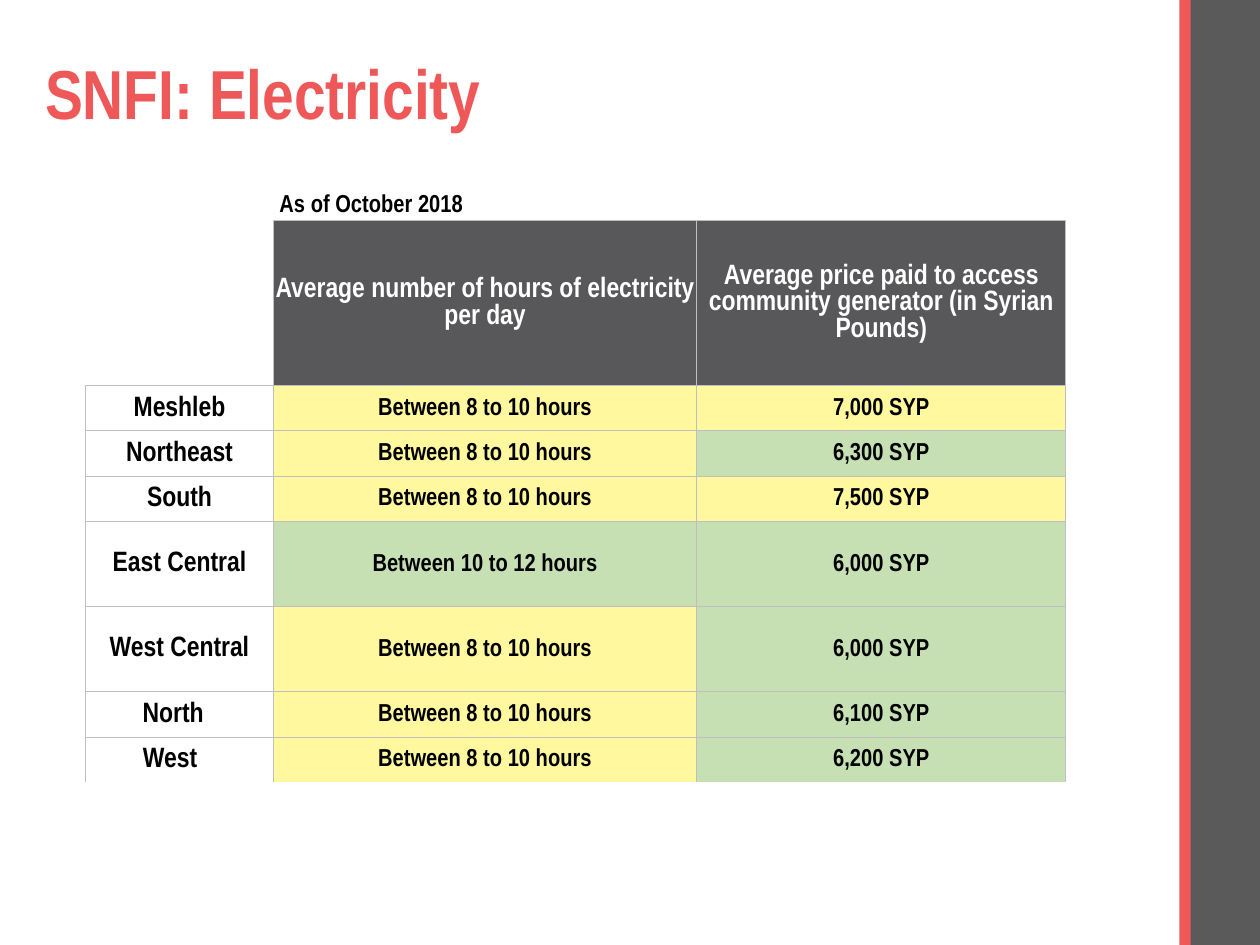
from typing import NamedTuple

from lxml import etree
from pptx import Presentation
from pptx.dml.color import RGBColor
from pptx.enum.shapes import MSO_SHAPE
from pptx.enum.text import MSO_ANCHOR, PP_ALIGN
from pptx.oxml.ns import qn
from pptx.util import Emu, Inches, Pt

RECT = MSO_SHAPE.RECTANGLE
MIDDLE, TOP = MSO_ANCHOR.MIDDLE, MSO_ANCHOR.TOP
CENTER, LEFT = PP_ALIGN.CENTER, PP_ALIGN.LEFT

RED = RGBColor(0xEE, 0x58, 0x59)
BAR_GRAY = RGBColor(0x5A, 0x5A, 0x5A)
HEADER_GRAY = RGBColor(0x58, 0x58, 0x5A)
YELLOW = RGBColor(0xFF, 0xF8, 0x9F)
GREEN = RGBColor(0xC6, 0xE0, 0xB4)
BORDER = RGBColor(0xBF, 0xBF, 0xBF)
BLACK = RGBColor(0, 0, 0)
WHITE = RGBColor(0xFF, 0xFF, 0xFF)

FONT = "Arial Narrow"
UNIT = Inches(0.1)
SLIDE_COLS, SLIDE_ROWS = 100, 75
SHORT, TALL, HEADER = 3.6, 6.75, 13.1
COLUMNS = (14.9, 33.6, 29.3)
TITLES = (
    "Average number of hours of electricity per day",
    "Average price paid to access community generator (in Syrian Pounds)",
)


class Box(NamedTuple):
    col: float
    row: float
    cols: float
    rows: float

    def place(self) -> list[Emu]:
        return [units(n) for n in self]


class Area(NamedTuple):
    name: str
    hours: str
    price: str
    hours_fill: RGBColor
    price_fill: RGBColor
    height: float = SHORT
    inset: float = 0.1


EIGHT = "Between 8 to 10 hours"
AREAS = (
    Area("Meshleb", EIGHT, "7,000 SYP", YELLOW, YELLOW),
    Area("Northeast", EIGHT, "6,300 SYP", YELLOW, GREEN),
    Area("South", EIGHT, "7,500 SYP", YELLOW, YELLOW),
    Area("East Central", "Between 10 to 12 hours", "6,000 SYP", GREEN, GREEN, TALL),
    Area("West Central", EIGHT, "6,000 SYP", YELLOW, GREEN, TALL),
    Area("North", EIGHT, "6,100 SYP", YELLOW, GREEN, inset=1.1),
    Area("West", EIGHT, "6,200 SYP", YELLOW, GREEN, inset=1.6),
)


def units(n: float) -> Emu:
    return Emu(round(n * UNIT))


def write(tf, text: str, size: float, color: RGBColor, align=LEFT):
    p = tf.paragraphs[0]
    p.text = text
    p.alignment = align
    p.font.name = FONT
    p.font.size = Pt(size)
    p.font.bold = True
    p.font.color.rgb = color
    return p


def add_bar(s, box: Box, color: RGBColor) -> None:
    sp = s.shapes.add_shape(RECT, *box.place())
    sp.shadow.inherit = False
    sp.fill.solid()
    sp.fill.fore_color.rgb = color
    sp.line.fill.background()


def add_text(s, box: Box, text: str, size: float, color: RGBColor, anchor=TOP):
    tf = s.shapes.add_textbox(*box.place()).text_frame
    tf.word_wrap = True
    tf.vertical_anchor = anchor
    return write(tf, text, size, color)


def set_borders(cell, hidden: str) -> None:
    tc_pr = cell._tc.get_or_add_tcPr()
    for i, side in enumerate("LRTB"):
        ln = etree.Element(qn(f"a:ln{side}"), w=str(Pt(0.5)))
        if side in hidden:
            etree.SubElement(ln, qn("a:noFill"))
        else:
            fill = etree.SubElement(ln, qn("a:solidFill"))
            etree.SubElement(fill, qn("a:srgbClr"), val=str(BORDER))
        tc_pr.insert(i, ln)


def fill_cell(cell, text: str, size: float, color: RGBColor,
              fill: RGBColor | None, hidden: str = "", inset: float = 0.1) -> None:
    cell.vertical_anchor = MIDDLE
    cell.margin_left = cell.margin_top = units(0.1)
    cell.margin_right = units(inset)
    cell.margin_bottom = 0
    if fill is None:
        cell.fill.background()
    else:
        cell.fill.solid()
        cell.fill.fore_color.rgb = fill
    if text:
        write(cell.text_frame, text, size, color, CENTER)
    set_borders(cell, hidden)


def add_electricity_table(s, col: float, row: float) -> None:
    heights = (HEADER, *(a.height for a in AREAS))
    box = Box(col, row, sum(COLUMNS), sum(heights))
    table = s.shapes.add_table(len(heights), len(COLUMNS), *box.place()).table
    table.first_row = table.horz_banding = False
    for column, width in zip(table.columns, COLUMNS):
        column.width = units(width)
    for line, height in zip(table.rows, heights):
        line.height = units(height)

    fill_cell(table.cell(0, 0), "", 16, BLACK, None, "LT")
    for c, title in enumerate(TITLES, 1):
        fill_cell(table.cell(0, c), title, 16, WHITE, HEADER_GRAY)
    for r, area in enumerate(AREAS, 1):
        hidden = "B" if r == len(AREAS) else ""
        fill_cell(table.cell(r, 0), area.name, 16, BLACK, None, hidden, area.inset)
        fill_cell(table.cell(r, 1), area.hours, 14, BLACK, area.hours_fill, hidden)
        fill_cell(table.cell(r, 2), area.price, 14, BLACK, area.price_fill, hidden)


def main() -> None:
    prs = Presentation()
    prs.slide_width, prs.slide_height = units(SLIDE_COLS), units(SLIDE_ROWS)
    s = prs.slides.add_slide(prs.slide_layouts[6])
    add_bar(s, Box(94.3, 0, 5.7, SLIDE_ROWS), BAR_GRAY)
    add_bar(s, Box(93.6, 0, 0.9, SLIDE_ROWS), RED)
    title = add_text(s, Box(2.6, 4, 86.9, 7.4), "SNFI: Electricity", 39.6, RED, MIDDLE)
    title.line_spacing = 0.9
    add_electricity_table(s, 6.8, 17.5)
    add_text(s, Box(21.2, 14.4, 89.4, 3.4), "As of October 2018", 14, BLACK)
    prs.save("out.pptx")


if __name__ == "__main__":
    main()
